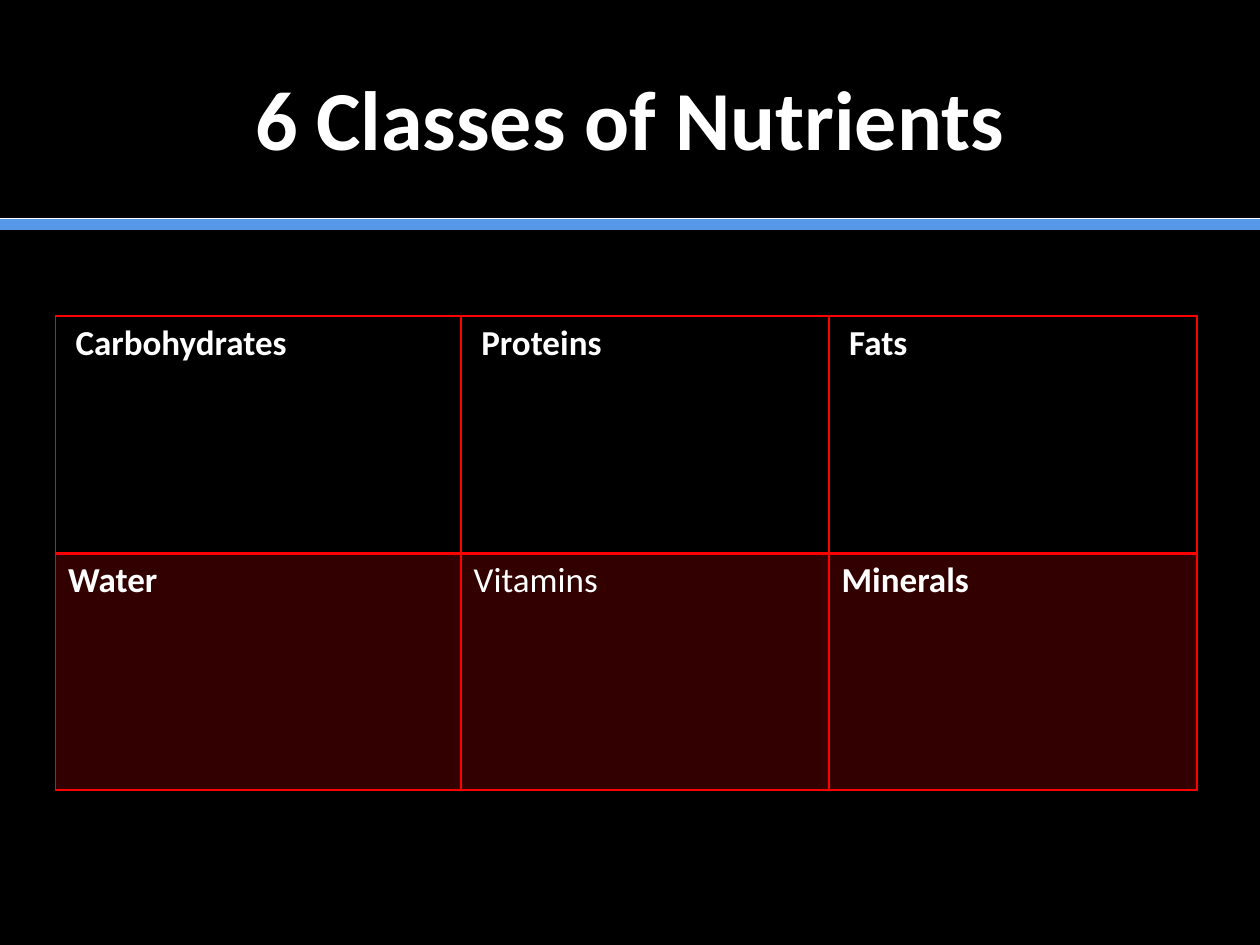
from dataclasses import dataclass

from lxml import etree
from pptx import Presentation
from pptx import util as u
from pptx.dml.color import RGBColor
from pptx.enum import shapes, text
from pptx.oxml.ns import qn


@dataclass(frozen=True)
class Theme:
    font: str = "Calibri"
    background: str = "000000"
    ink: str = "FFFFFF"
    accent: str = "5799E8"
    grid: str = "FF0000"
    tint_percent: int = 20
    title_size: int = 48
    cell_size: int = 20


@dataclass(frozen=True)
class Rule:
    top: float
    color: str
    weight: float


@dataclass(frozen=True)
class Nutrient:
    name: str
    bold: bool = True


THEME = Theme()
WIDTH, HEIGHT = 10, 7.5
RULES = (Rule(1.78, THEME.accent, 7), Rule(1.73, THEME.ink, 0.5))
COLUMN_WIDTHS = (3.22, 2.92, 2.92)
ROW_HEIGHT = 1.88
ROW_INDENTS = (0.16, 0.1)
NUTRIENTS = (
    (Nutrient("Carbohydrates"), Nutrient("Proteins"), Nutrient("Fats")),
    (Nutrient("Water"), Nutrient("Vitamins", bold=False), Nutrient("Minerals")),
)


def format_text(text_frame, size: int, bold: bool = True) -> None:
    for paragraph in text_frame.paragraphs:
        for run in paragraph.runs:
            run.font.name = THEME.font
            run.font.size = u.Pt(size)
            run.font.bold = bold
            run.font.color.rgb = RGBColor.from_string(THEME.ink)


def draw_rule(slide, rule: Rule) -> None:
    top = u.Inches(rule.top)
    connector = slide.shapes.add_connector(
        shapes.MSO_CONNECTOR.STRAIGHT, 0, top, u.Inches(WIDTH), top)
    connector.line.color.rgb = RGBColor.from_string(rule.color)
    connector.line.width = u.Pt(rule.weight)
    etree.SubElement(connector.element.spPr, qn("a:effectLst"))


def draw_title(slide, wording: str) -> None:
    title = slide.shapes.title
    title.left, title.top = u.Inches(0.5), u.Inches(0.3)
    title.width, title.height = u.Inches(WIDTH - 1), u.Inches(1.25)
    title.text_frame.text = wording
    title.text_frame.vertical_anchor = text.MSO_ANCHOR.MIDDLE
    title.text_frame.paragraphs[0].alignment = text.PP_ALIGN.CENTER
    format_text(title.text_frame, THEME.title_size)


def add_border(cell, side: str, weight: float) -> None:
    properties = cell._tc.get_or_add_tcPr()
    line = etree.SubElement(properties, qn(f"a:ln{side}"), w=str(u.Pt(weight)))
    fill = etree.SubElement(line, qn("a:solidFill"))
    etree.SubElement(fill, qn("a:srgbClr"), val=THEME.grid)


def tint_cell(cell) -> None:
    cell.fill.solid()
    cell.fill.fore_color.rgb = RGBColor.from_string(THEME.grid)
    color = cell._tc.tcPr.find(f"{qn('a:solidFill')}/{qn('a:srgbClr')}")
    etree.SubElement(color, qn("a:alpha"), val=str(THEME.tint_percent * 1000))


def draw_cell(cell, nutrient: Nutrient, row: int) -> None:
    cell.text_frame.text = nutrient.name
    cell.margin_left = u.Inches(ROW_INDENTS[row])
    format_text(cell.text_frame, THEME.cell_size, nutrient.bold)
    # The line between the two rows is heavier than the others
    top, bottom = (1, 2) if row == 0 else (2, 1)
    for side, weight in (("L", 1), ("R", 1), ("T", top), ("B", bottom)):
        add_border(cell, side, weight)
    if row == 0:
        cell.fill.background()
    else:
        tint_cell(cell)


def draw_table(slide) -> None:
    rows, columns = len(NUTRIENTS), len(COLUMN_WIDTHS)
    table = slide.shapes.add_table(
        rows, columns, u.Inches(0.44), u.Inches(2.51),
        u.Inches(sum(COLUMN_WIDTHS)), u.Inches(rows * ROW_HEIGHT)).table
    table.first_row = table.horz_banding = False
    for column, width in zip(table.columns, COLUMN_WIDTHS):
        column.width = u.Inches(width)
    for row, nutrients in enumerate(NUTRIENTS):
        table.rows[row].height = u.Inches(ROW_HEIGHT)
        for column, nutrient in enumerate(nutrients):
            draw_cell(table.cell(row, column), nutrient, row)


def main() -> None:
    presentation = Presentation()
    presentation.slide_width = u.Inches(WIDTH)
    presentation.slide_height = u.Inches(HEIGHT)
    slide = presentation.slides.add_slide(
        presentation.slide_layouts.get_by_name("Title Only"))
    slide.background.fill.solid()
    slide.background.fill.fore_color.rgb = RGBColor.from_string(THEME.background)

    # Header: title above a double rule
    for rule in RULES:
        draw_rule(slide, rule)
    draw_title(slide, "6 Classes of Nutrients")

    # Body: the six nutrient classes
    draw_table(slide)
    presentation.save("out.pptx")


if __name__ == "__main__":
    main()
